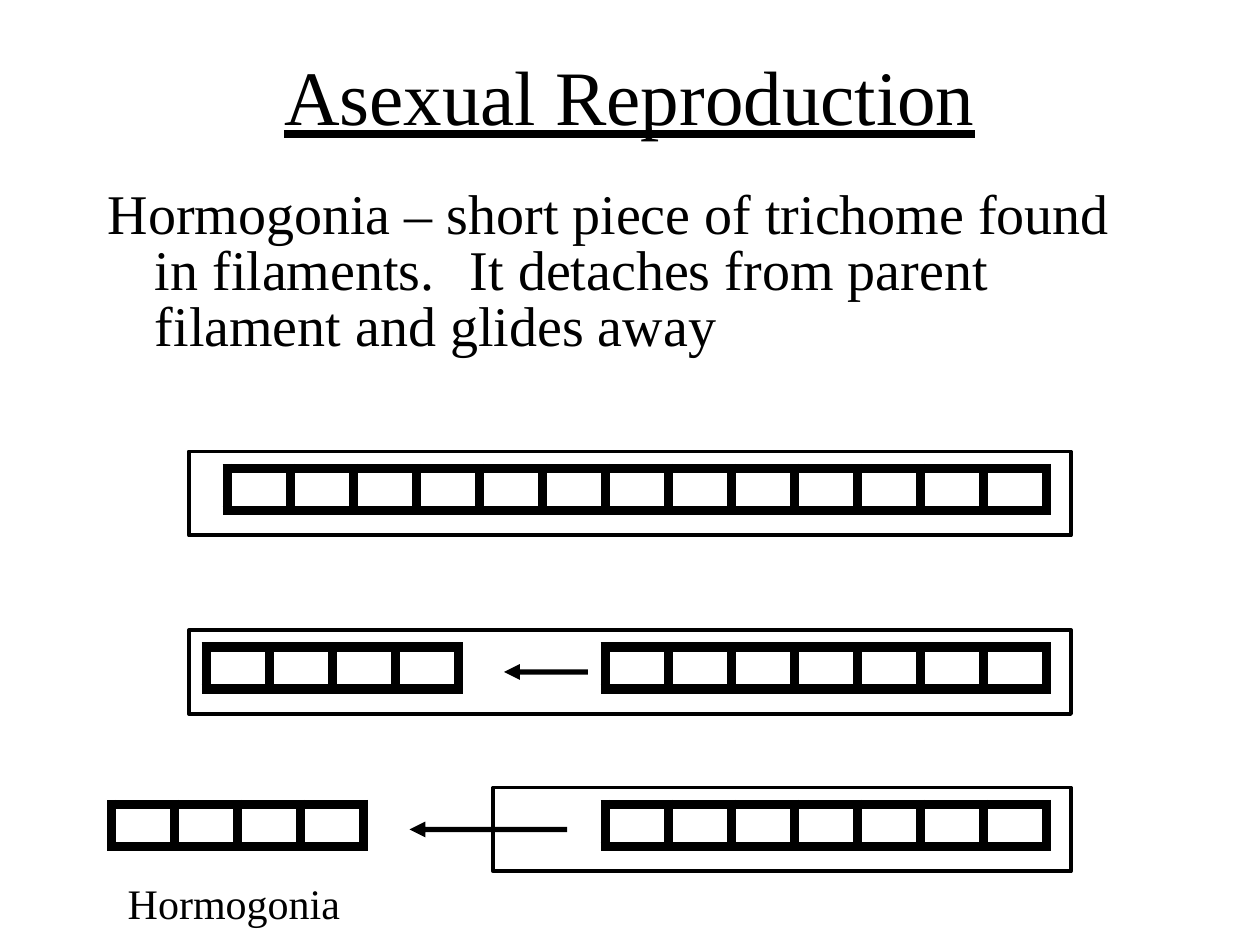
from lxml import etree
from pptx import Presentation
from pptx.dml.color import RGBColor
from pptx.enum.shapes import MSO_SHAPE
from pptx.enum.text import MSO_UNDERLINE
from pptx.oxml.ns import qn
from pptx.util import Pt

RECTANGLE = MSO_SHAPE.RECTANGLE
LEFT_ARROW = MSO_SHAPE.LEFT_ARROW
HEAVY_LINE = MSO_UNDERLINE.HEAVY_LINE
COLORS = {"ink": "000000"}
INK = RGBColor.from_string(COLORS["ink"])
FONT = "Times New Roman"
CELL_WIDTH, CELL_HEIGHT, WALL = 36, 24, 6
SHEATH_HEIGHT, SHEATH_RIGHT = 48, 612
ARROW_HEIGHT = 9

prs = Presentation()
prs.slide_width, prs.slide_height = Pt(720), Pt(540)
slide = prs.slides.add_slide(prs.slide_layouts[6])


def add_text(left, top, width, height, inset_top, size, text, underline=None):
    """Add a one-paragraph text box and return its paragraph."""
    frame = slide.shapes.add_textbox(Pt(left), Pt(top), Pt(width), Pt(height)).text_frame
    frame.word_wrap = True
    frame.margin_left = frame.margin_right = frame.margin_bottom = 0
    frame.margin_top = Pt(inset_top)
    paragraph = frame.paragraphs[0]
    run = paragraph.add_run()
    run.text = text
    run.font.name, run.font.size = FONT, Pt(size)
    run.font.color.rgb = INK
    run.font.underline = underline
    return paragraph


def add_trichome(left, top, count):
    """Add a chain of cells with thick walls."""
    table = slide.shapes.add_table(1, count, Pt(left), Pt(top),
                                   Pt(count * CELL_WIDTH), Pt(CELL_HEIGHT)).table
    table.first_row = table.horz_banding = False
    for cell in table.iter_cells():
        cell.margin_left = cell.margin_right = cell.margin_top = cell.margin_bottom = 0
        cell.fill.background()
        properties = cell._tc.get_or_add_tcPr()
        for position, side in enumerate(("lnL", "lnR", "lnT", "lnB")):
            border = etree.Element(qn(f"a:{side}"), w=str(Pt(WALL)))
            fill = etree.SubElement(border, qn("a:solidFill"))
            etree.SubElement(fill, qn("a:srgbClr"), val=COLORS["ink"])
            properties.insert(position, border)


add_text(162.3, 26.6, 397.5, 54.7, 1.2, 44, "Asexual Reproduction", HEAVY_LINE)

definition = add_text(
    60.5, 101.5, 576.7, 104.4, 7.1, 32,
    "Hormogonia – short piece of trichome found in filaments.\t"
    "It detaches from parent filament and glides away")
definition.line_spacing = 0.83
indents = definition._p.get_or_add_pPr()
indents.set("marL", str(Pt(28)))
indents.set("indent", str(Pt(-27)))
tab_stops = etree.SubElement(indents, qn("a:tabLst"))
etree.SubElement(tab_stops, qn("a:tab"), pos=str(Pt(252)), algn="l")

# Sheath top, sheath left, trichomes as (left, cells), arrow as (left, width)
stages = [
    (258, 108, [(129.8, 13)], None),
    (360, 108, [(117.8, 4), (345.8, 7)], (288, 48)),
    (450, 282, [(63.8, 4), (345.8, 7)], (234, 90)),
]
for top, sheath_left, trichomes, arrow_span in stages:
    for left, count in trichomes:
        add_trichome(left, top + 9.7, count)

    sheath = slide.shapes.add_shape(RECTANGLE, Pt(sheath_left), Pt(top),
                                    Pt(SHEATH_RIGHT - sheath_left), Pt(SHEATH_HEIGHT))
    sheath.shadow.inherit = False
    sheath.fill.background()
    sheath.line.color.rgb = INK
    sheath.line.width = Pt(2.25)

    if arrow_span:
        left, width = arrow_span
        arrow = slide.shapes.add_shape(
            LEFT_ARROW, Pt(left), Pt(top + (SHEATH_HEIGHT - ARROW_HEIGHT) / 2),
            Pt(width), Pt(ARROW_HEIGHT))
        arrow.adjustments[0], arrow.adjustments[1] = 0.33, 1
        arrow.shadow.inherit = False
        arrow.fill.solid()
        arrow.fill.fore_color.rgb = INK
        arrow.line.fill.background()

add_text(73, 500.4, 123.8, 31, 1.1, 24, "Hormogonia")

prs.save("out.pptx")
